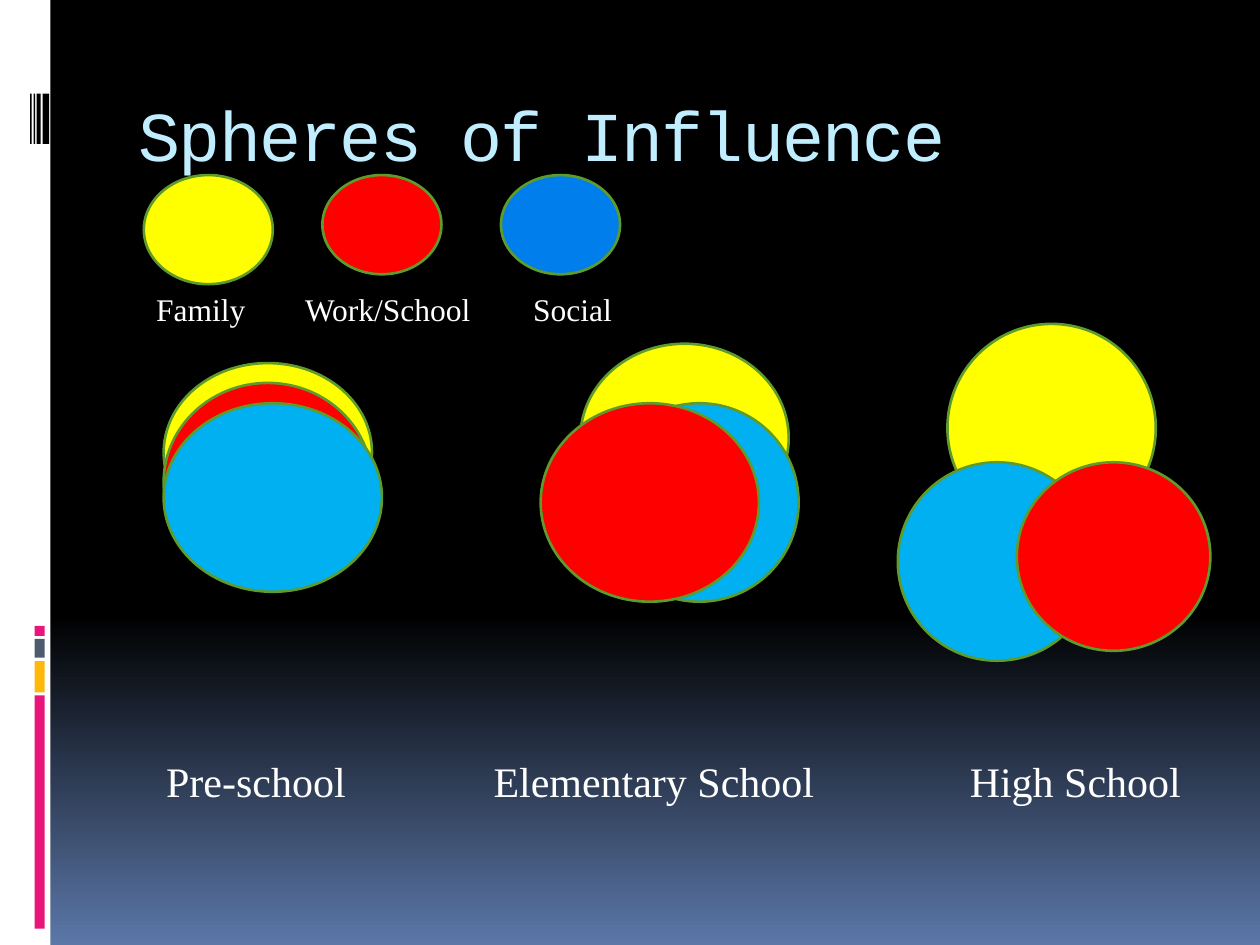
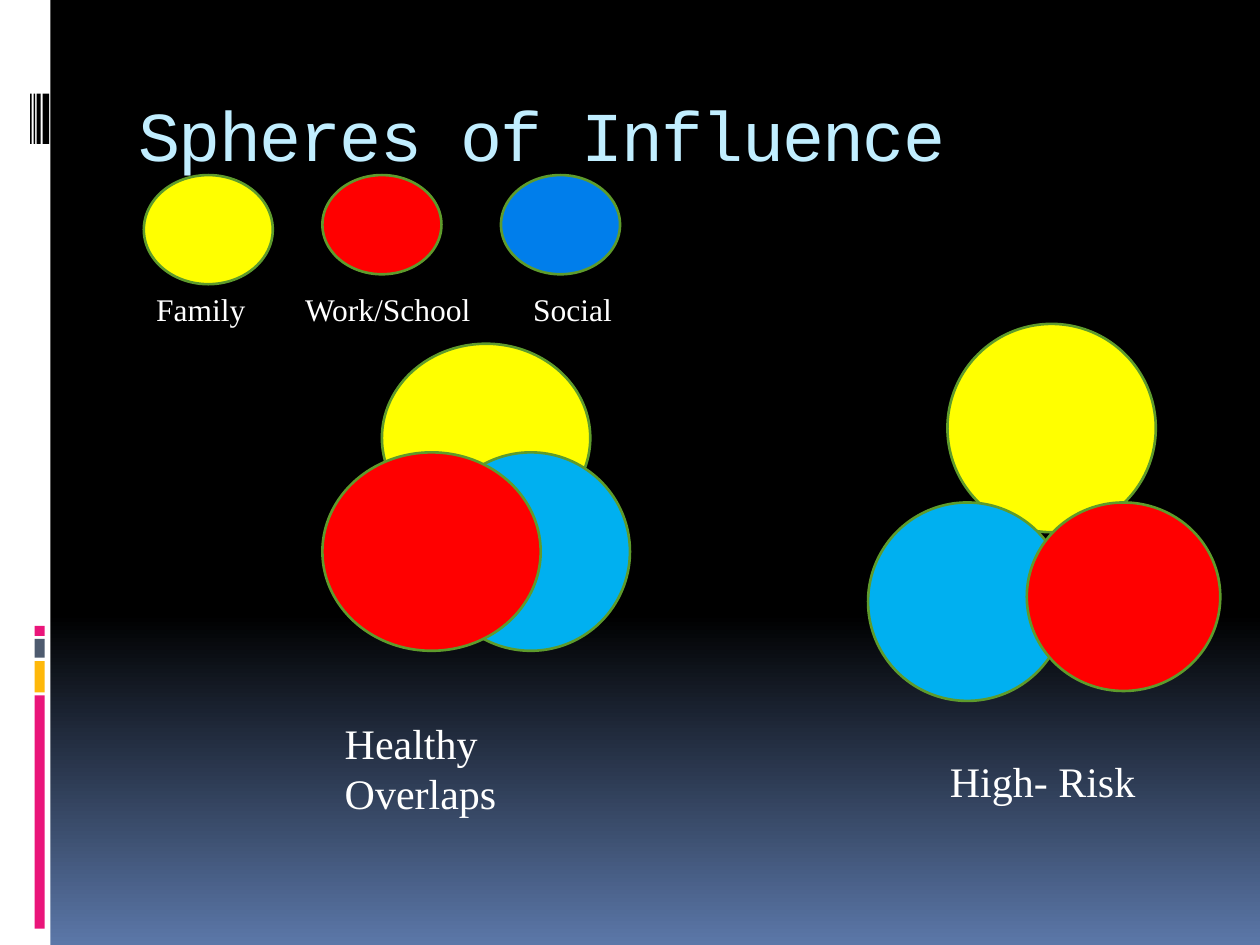
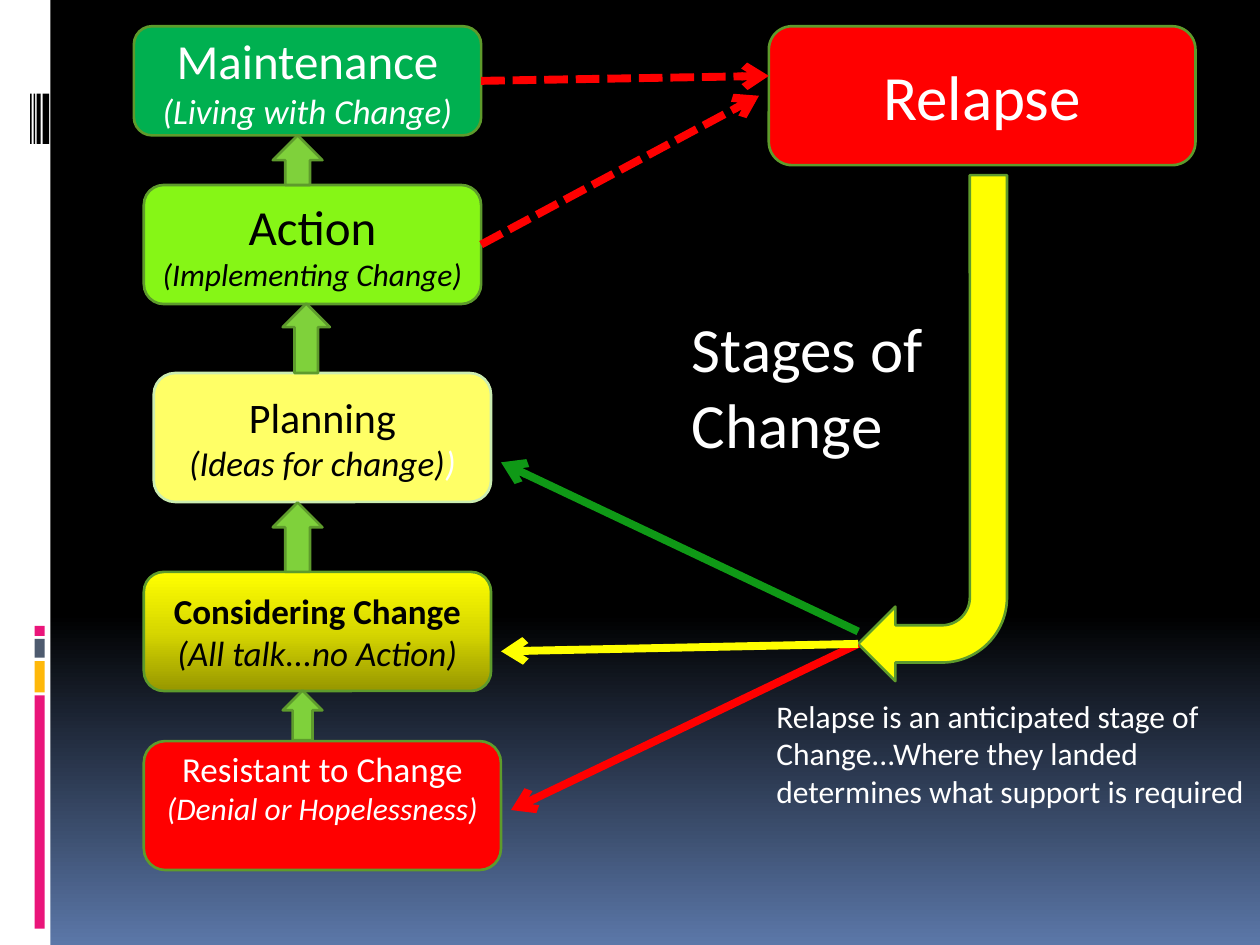
import copy

import pptx
import pptx.dml.color
import pptx.enum.dml
import pptx.enum.shapes
import pptx.enum.text
import pptx.oxml.ns
import pptx.oxml.xmlchemy
import pptx.util
from lxml import etree

Cm = pptx.util.Cm
Pt = pptx.util.Pt
RGBColor = pptx.dml.color.RGBColor
SHAPE = pptx.enum.shapes.MSO_SHAPE
ALIGN = pptx.enum.text.PP_ALIGN
ANCHOR = pptx.enum.text.MSO_ANCHOR
AUTO = pptx.enum.text.MSO_AUTO_SIZE
qn = pptx.oxml.ns.qn

BLACK = RGBColor(0x00, 0x00, 0x00)
WHITE = RGBColor(0xFF, 0xFF, 0xFF)
SLATE_BLUE = RGBColor(0x5B, 0x77, 0xA8)
PINK = RGBColor(0xEA, 0x15, 0x7A)
AMBER = RGBColor(0xFE, 0xB8, 0x0A)
SLATE = RGBColor(0x4E, 0x5B, 0x6F)
PALE_BLUE = RGBColor(0xC1, 0xEE, 0xFF)
OUTLINE = RGBColor(0x5E, 0x9B, 0x2C)
YELLOW = RGBColor(0xFF, 0xFF, 0x00)
RED = RGBColor(0xFF, 0x00, 0x00)
BLUE = RGBColor(0x00, 0x7E, 0xEB)
SKY = RGBColor(0x00, 0xB0, 0xF0)
GREEN = RGBColor(0x00, 0xB0, 0x50)
LIME = RGBColor(0x86, 0xF6, 0x16)
CREAM = RGBColor(0xFF, 0xFF, 0x66)
MINT = RGBColor(0xCC, 0xED, 0xB1)
LEAF = RGBColor(0x7F, 0xD1, 0x3B)
DARK_GREEN = RGBColor(0x0F, 0x99, 0x16)
OLIVE = RGBColor(0x97, 0x97, 0x00)
MUSTARD = RGBColor(0xD7, 0xD7, 0x00)

SERIF = "Times New Roman"
SANS = "Calibri"
MONO = "Courier New"


def add_figure(s, kind, box, fill, line=OUTLINE):
    sp = s.shapes.add_shape(kind, *[Cm(v) for v in box])
    sp.shadow.inherit = False
    sp.fill.solid()
    sp.fill.fore_color.rgb = fill
    if line is None:
        sp.line.fill.background()
    else:
        sp.line.color.rgb = line
        sp.line.width = Pt(1.5)
    return sp


def add_run(p, text, size, font, color, bold=False, italic=False):
    r = p.add_run()
    r.text = text
    r.font.size = Pt(size)
    r.font.name = font
    r.font.color.rgb = color
    r.font.bold = bold
    r.font.italic = italic
    return r


prs = pptx.Presentation()
prs.slide_width = Cm(25.4)
prs.slide_height = Cm(19.05)
title_layout, blank_layout = prs.slide_layouts[5], prs.slide_layouts[6]
slides = [prs.slides.add_slide(layout)
          for layout in (title_layout, title_layout, blank_layout)]

# Side band, drawn once and moved to the master
bands = [
    ((0, 0, 1.02, 19.05), WHITE),
    ((0.7, 14.02, 0.2, 4.7), PINK),
    ((0.7, 13.33, 0.2, 0.63), AMBER),
    ((0.7, 12.88, 0.2, 0.38), SLATE),
    ((0.7, 12.62, 0.2, 0.2), PINK),
    ((0.86, 1.89, 0.13, 1.01), BLACK),
    ((0.74, 1.89, 0.08, 1.01), BLACK),
    ((0.68, 1.89, 0.03, 1.01), BLACK),
    ((0.61, 1.89, 0.03, 1.01), BLACK),
]
master_tree = prs.slide_master.element.cSld.spTree
for i, (box, color) in enumerate(bands):
    sp = add_figure(slides[0], SHAPE.RECTANGLE, box, color, None)
    master_tree.insert(2 + i, sp.element)

# Spheres: (box, colour), back to front, and captions: (text, box)
sphere_slides = [
    ([((3.3, 7.32, 4.2, 3.6), YELLOW),
      ((3.3, 7.72, 4.2, 4), RED),
      ((3.3, 8.13, 4.4, 3.8), SKY),
      ((11.7, 6.93, 4.2, 3.8), YELLOW),
      ((12.1, 8.13, 4, 4), SKY),
      ((10.9, 8.13, 4.4, 4), RED),
      ((19.1, 6.53, 4.2, 4.2), YELLOW),
      ((18.1, 9.32, 4, 4), SKY),
      ((20.5, 9.32, 3.9, 3.8), RED)],
     [("Pre-school", (3.1, 15.11, 4.8, 1.27)),
      ("Elementary School", (9.7, 15.11, 7.4, 1.27)),
      ("High School", (19.3, 15.11, 4.8, 1.27))]),
    ([((7.7, 6.93, 4.2, 3.8), YELLOW),
      ((8.7, 9.12, 4, 4), SKY),
      ((6.5, 9.12, 4.4, 4), RED),
      ((19.1, 6.53, 4.2, 4.2), YELLOW),
      ((17.5, 10.13, 4, 4), SKY),
      ((20.7, 10.13, 3.9, 3.8), RED)],
     [("Healthy Overlaps", (6.7, 14.33, 4.8, 2.31)),
      ("High- Risk", (18.9, 15.11, 5.2, 1.27))]),
]
legend_spheres = [
    ((2.9, 3.53, 2.6, 2.2), YELLOW),
    ((6.5, 3.53, 2.4, 2), RED),
    ((10.1, 3.53, 2.4, 2), BLUE),
]
legend_labels = [
    ("Family", (2.9, 5.72, 2.6, 1.02)),
    ("Work/School", (5.9, 5.72, 4, 1.02)),
    ("Social", (10.5, 5.72, 3, 1.02)),
]

# Plain texts: (slide, text, box, size, font)
texts = [
    (slides[2], "Relapse is an anticipated stage of Change...Where they landed "
     "determines what support is required", (15.4, 13.92, 10, 2.57), 18, SANS),
    (slides[2], "Stages of Change", (13.7, 6.12, 5.6, 3.33), 36, SANS),
]

# Slides 1 and 2: title, legend and spheres
for s, (spheres, captions) in zip(slides, sphere_slides):
    title = s.shapes.title
    title.left, title.top = Cm(2.54), Cm(1.42)
    title.width, title.height = Cm(21.59), Cm(2.54)
    tf = title.text_frame
    tf.auto_size = AUTO.NONE
    tf.vertical_anchor = ANCHOR.MIDDLE
    p = tf.paragraphs[0]
    p.alignment = ALIGN.LEFT
    r = add_run(p, "Spheres of Influence", 40, MONO, PALE_BLUE)
    r.font._element.set("spc", "-100")
    for box, color in legend_spheres + spheres:
        add_figure(s, SHAPE.OVAL, box, color)
    texts += [(s, text, box, 18, SERIF) for text, box in legend_labels]
    texts += [(s, text, box, 24, SERIF) for text, box in captions]

# Slide 3: stage boxes, each line a list of (text, size, colour, bold, italic)
s = slides[2]
stages = [
    ((2.7, 0.53, 7, 2.2), GREEN, OUTLINE,
     [[("Maintenance", 28, WHITE, False, False)],
      [("(Living with Change)", 20, WHITE, False, True)]]),
    ((2.9, 3.73, 6.8, 2.4), LIME, OUTLINE,
     [[("Action", 28, BLACK, False, False)],
      [("(Implementing Change)", 18, BLACK, False, True)]]),
    ((3.1, 7.52, 6.8, 2.6), CREAM, MINT,
     [[("Planning", 24, BLACK, False, False)],
      [("(Ideas for change)", 20, BLACK, False, True),
       (")", 20, WHITE, False, True)]]),
    ((2.9, 11.53, 7, 2.4), YELLOW, OUTLINE,
     [[("Considering Change", 20, BLACK, True, False)],
      [("(All talk...no Action)", 20, BLACK, False, True)]]),
    ((2.9, 14.94, 7.2, 2.6), RED, OUTLINE,
     [[("Resistant to Change", 20, WHITE, False, False)],
      [("(Denial or Hopelessness)", 18, WHITE, False, True)]]),
    ((15.5, 0.53, 8.6, 2.8), RED, OUTLINE,
     [[("Relapse", 36, WHITE, False, False)]]),
]
stage_boxes = []
for box, fill, line, lines in stages:
    sp = add_figure(s, SHAPE.ROUNDED_RECTANGLE, box, fill, line)
    stage_boxes.append(sp)
    tf = sp.text_frame
    tf.word_wrap = True
    tf.vertical_anchor = ANCHOR.MIDDLE
    for i, runs in enumerate(lines):
        p = tf.add_paragraph() if i else tf.paragraphs[0]
        p.alignment = ALIGN.CENTER
        for text, size, color, bold, italic in runs:
            add_run(p, text, size, SANS, color, bold, italic)
considering, resistant = stage_boxes[3:5]
resistant.text_frame.vertical_anchor = ANCHOR.TOP
resistant.text_frame.margin_top = 0

# Upward steps between the stages
for box in [(5.7, 13.92, 0.8, 1), (5.5, 10.13, 1, 1.4),
            (5.7, 6.12, 0.95, 1.4), (5.5, 2.73, 1, 1)]:
    add_figure(s, SHAPE.UP_ARROW, box, LEAF)

# Way back from relapse
sp = add_figure(s, SHAPE.BENT_ARROW, (17.3, 3.53, 3, 10.2), YELLOW)
sp.rotation = 180

# Arrows into and out of relapse: (from, to, colour, dashed)
arrows = [
    ((9.7, 1.63), (15.5, 1.53), RED, True),
    ((9.7, 4.93), (15.3, 1.93), RED, True),
    ((17.3, 12.98), (10.3, 16.33), RED, False),
    ((17.3, 12.98), (10.1, 13.13), YELLOW, False),
    ((17.3, 12.73), (10.1, 9.32), DARK_GREEN, False),
]
for start, end, color, dashed in arrows:
    line = s.shapes.add_connector(pptx.enum.shapes.MSO_CONNECTOR.STRAIGHT,
                                  *[Cm(v) for v in start + end])
    line.line.color.rgb = color
    line.line.width = Pt(4.5)
    if dashed:
        line.line.dash_style = pptx.enum.dml.MSO_LINE.SQUARE_DOT
    etree.SubElement(line.line._get_or_add_ln(), qn("a:tailEnd"), type="arrow")
    etree.SubElement(line.element.spPr, qn("a:effectLst"))

# Labels, captions and notes
for s, text, box, size, font in texts:
    tf = s.shapes.add_textbox(*[Cm(v) for v in box]).text_frame
    tf.word_wrap = True
    tf.auto_size = AUTO.SHAPE_TO_FIT_TEXT
    add_run(tf.paragraphs[0], text, size, font, WHITE)

# Three-stop gradients of the background and the considering box
gradients = [
    (prs.slide_master.background.fill, prs.slide_master.element, 270,
     [(0, BLACK), (0.65, BLACK), (1, SLATE_BLUE)]),
    (considering.fill, considering.element, 90,
     [(0, OLIVE), (0.5, MUSTARD), (1, YELLOW)]),
]
for fill, element, angle, colors in gradients:
    fill.gradient()
    fill.gradient_angle = angle
    stop_list = element.find(".//" + qn("a:gsLst"))
    stop_list.append(copy.deepcopy(stop_list[-1]))
    for stop, (position, color) in zip(fill.gradient_stops, colors):
        stop.position = position
        stop.color.rgb = color

prs.save("out.pptx")
